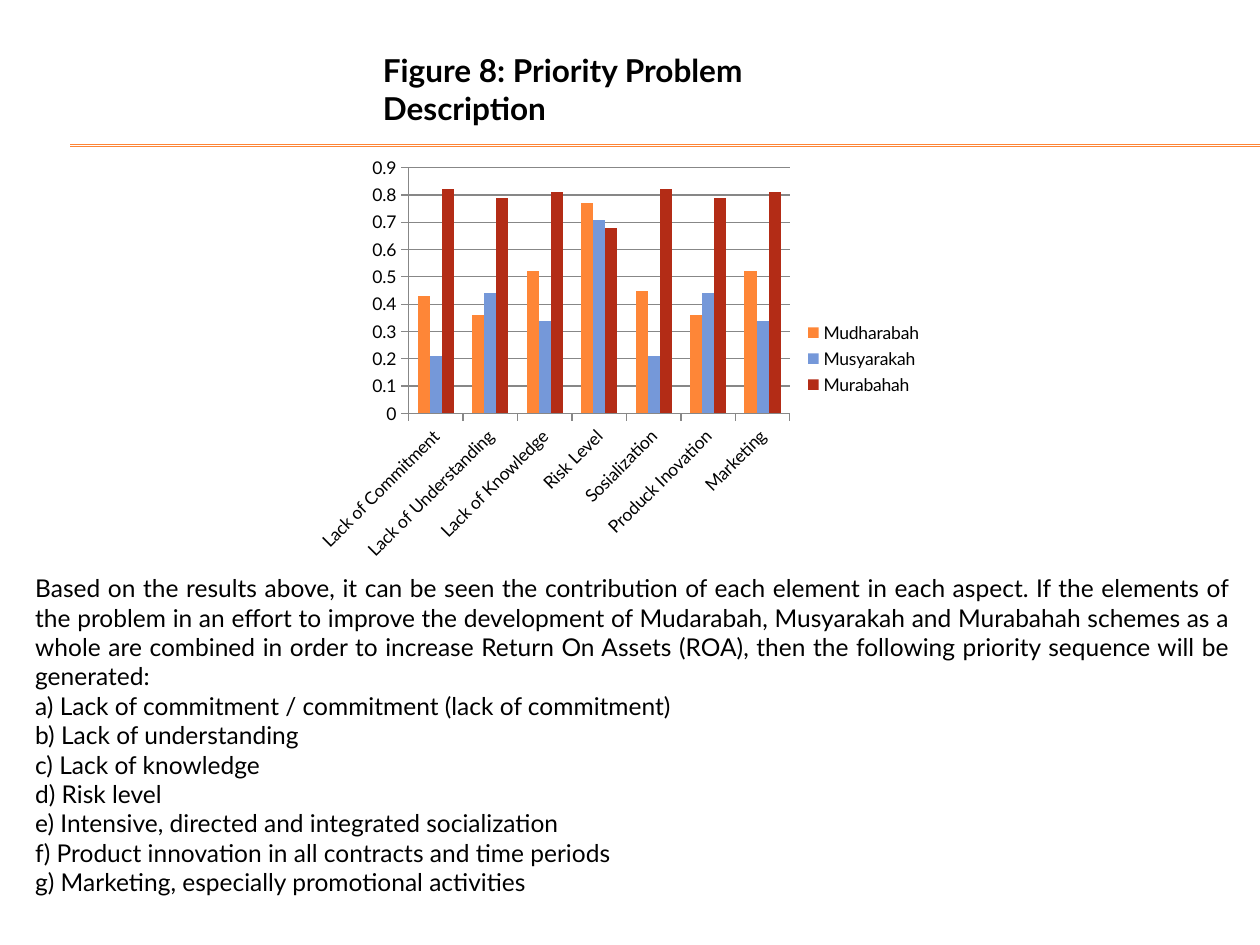
import pptx
import pptx.chart.data
import pptx.dml.color
import pptx.enum.chart
import pptx.enum.shapes
import pptx.enum.text
import pptx.oxml.ns
import pptx.util
from lxml import etree

Cm, Pt = pptx.util.Cm, pptx.util.Pt
FONT = "Lato"
COLORS = {
    "text": "000000",
    "rule": "FE8637",
    "grid": "878787",
    "Mudharabah": "FE8637",
    "Musyarakah": "7598D9",
    "Murabahah": "B32C16",
}


def rgb(name):
    return pptx.dml.color.RGBColor.from_string(COLORS[name])


def add_text(slide, paragraphs, left, top, width, height, size, bold=False, align=None):
    box = slide.shapes.add_textbox(Cm(left), Cm(top), Cm(width), Cm(height))
    frame = box.text_frame
    frame.word_wrap = True
    frame.text = "\n".join(paragraphs)
    for paragraph in frame.paragraphs:
        paragraph.alignment = align
        font = paragraph.runs[0].font
        font.name, font.size, font.bold = FONT, Pt(size), bold
        font.color.rgb = rgb("text")


deck = pptx.Presentation()
deck.slide_width, deck.slide_height = Cm(25.4), Cm(19.05)
slide = deck.slides.add_slide(deck.slide_layouts[6])

# Double rule under the heading
for height in (2.92, 2.95):
    rule = slide.shapes.add_connector(
        pptx.enum.shapes.MSO_CONNECTOR.STRAIGHT,
        Cm(1.42), Cm(height), Cm(25.4), Cm(height))
    rule.line.color.rgb = rgb("rule")
    rule.line.width = Pt(0.75)
    etree.SubElement(rule._element.spPr, pptx.oxml.ns.qn("a:effectLst"))

add_text(slide, ["Figure 8: Priority Problem Description"],
         left=7.47, top=0.91, width=10.57, height=1.02, size=18, bold=True)

# Priority chart
priorities = pptx.chart.data.CategoryChartData()
priorities.categories = [
    "Lack of Commitment", "Lack of Understanding", "Lack of Knowledge",
    "Risk Level", "Sosialization", "Produck Inovation", "Marketing"]
priorities.add_series("Mudharabah", [0.43, 0.36, 0.52, 0.77, 0.45, 0.36, 0.52])
priorities.add_series("Musyarakah", [0.21, 0.44, 0.34, 0.71, 0.21, 0.44, 0.34])
priorities.add_series("Murabahah", [0.82, 0.79, 0.81, 0.68, 0.82, 0.79, 0.81])
chart = slide.shapes.add_chart(
    pptx.enum.chart.XL_CHART_TYPE.COLUMN_CLUSTERED,
    Cm(6.15), Cm(3), Cm(12.7), Cm(8.46), priorities).chart
chart.has_title = False
chart.font.name, chart.font.size = FONT, Pt(10)
chart.font.color.rgb = rgb("text")

chart.has_legend = True
chart.legend.position = pptx.enum.chart.XL_LEGEND_POSITION.RIGHT
chart.legend.include_in_layout = False

columns = chart.plots[0]
columns.gap_width, columns.overlap = 150, 0
columns.vary_by_categories = False
for series in columns.series:
    series.format.fill.solid()
    series.format.fill.fore_color.rgb = rgb(series.name)

for axis in (chart.category_axis, chart.value_axis):
    axis.major_tick_mark = pptx.enum.chart.XL_TICK_MARK.OUTSIDE
    axis.format.line.color.rgb = rgb("grid")
    axis.format.line.width = Pt(0.75)
    axis.tick_labels.font.size = Pt(10)
chart.category_axis._element.txPr.bodyPr.set("rot", str(-45 * 60000))

scale = chart.value_axis
scale.minimum_scale, scale.maximum_scale, scale.major_unit = 0, 0.9, 0.1
scale.tick_labels.number_format = "General"
scale.tick_labels.number_format_is_linked = False
scale.has_major_gridlines = True
scale.major_gridlines.format.line.color.rgb = rgb("grid")
scale.major_gridlines.format.line.width = Pt(0.75)

add_text(slide, [
    "Based on the results above, it can be seen the contribution of each element "
    "in each aspect. If the elements of the problem in an effort to improve the "
    "development of Mudarabah, Musyarakah and Murabahah schemes as a whole are "
    "combined in order to increase Return On Assets (ROA), then the following "
    "priority sequence will be generated:",
    "a) Lack of commitment / commitment (lack of commitment)",
    "b) Lack of understanding",
    "c) Lack of knowledge",
    "d) Risk level",
    "e) Intensive, directed and integrated socialization",
    "f) Product innovation in all contracts and time periods",
    "g) Marketing, especially promotional activities",
], left=0.46, top=11.43, width=24.59, height=6.25, size=14,
    align=pptx.enum.text.PP_ALIGN.JUSTIFY)

deck.save("out.pptx")
